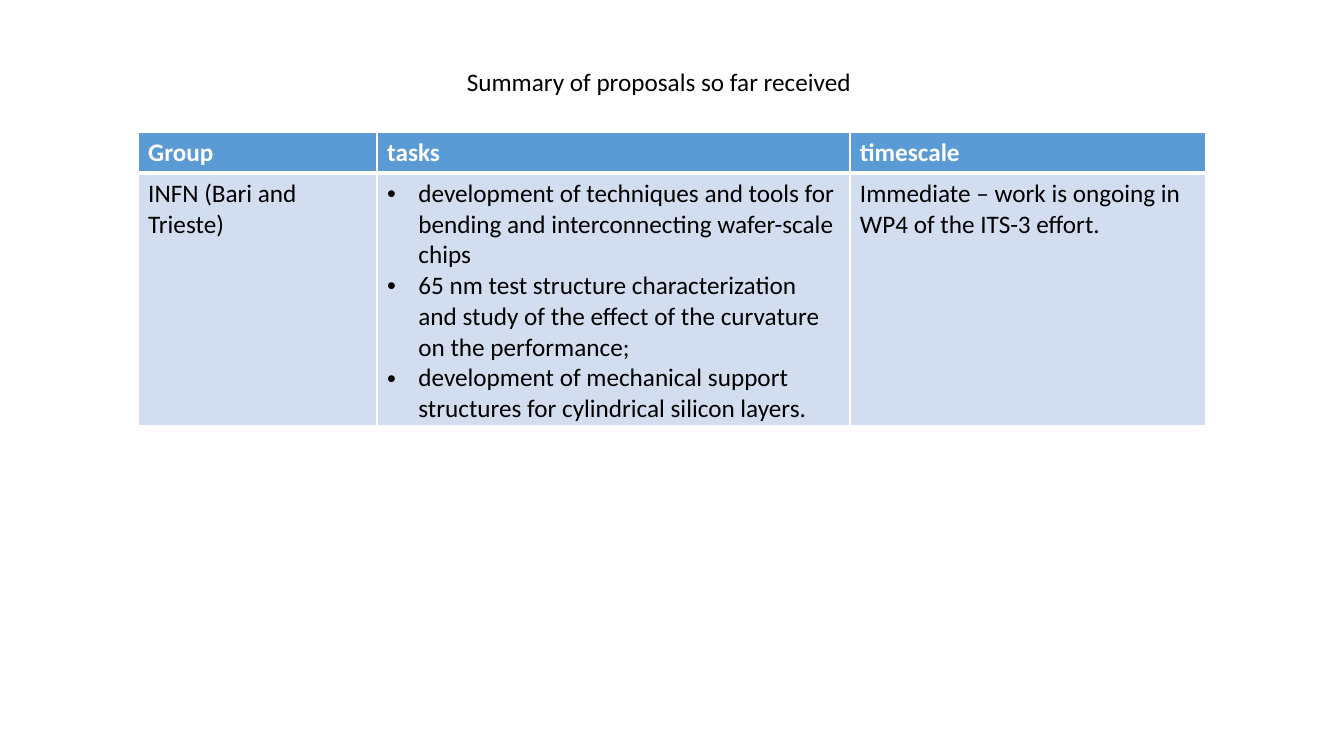
from dataclasses import dataclass

from lxml import etree
from pptx import Presentation
from pptx.dml.color import RGBColor
from pptx.enum.text import MSO_ANCHOR, MSO_AUTO_SIZE, PP_ALIGN
from pptx.oxml.ns import qn
from pptx.util import Inches, Pt

TOP = MSO_ANCHOR.TOP
LEFT = PP_ALIGN.LEFT
FIT_SHAPE = MSO_AUTO_SIZE.SHAPE_TO_FIT_TEXT

BLACK = RGBColor(0x00, 0x00, 0x00)
WHITE = RGBColor(0xFF, 0xFF, 0xFF)
HEADER_BLUE = RGBColor(0x5B, 0x9B, 0xD5)
BODY_BLUE = RGBColor(0xD2, 0xDE, 0xEF)

FONT = "Calibri"
FONT_SIZE = Pt(18)
BULLET_INDENT = Inches(0.31)
TITLE_ONLY_LAYOUT = 5


@dataclass(frozen=True)
class Column:
    heading: str
    width: float
    entries: tuple[str, ...]
    bulleted: bool = False


COLUMNS = (
    Column("Group", 2.37, ("INFN (Bari and Trieste)",)),
    Column("tasks", 4.69, (
        "development of techniques and tools for bending and interconnecting wafer-scale chips",
        "65 nm test structure characterization and study of the effect of the curvature "
        "on the performance;",
        "development of mechanical support structures for cylindrical silicon layers.",
    ), bulleted=True),
    Column("timescale", 3.53, ("Immediate – work is ongoing in WP4 of the ITS-3 effort.",)),
)
ROW_HEIGHTS = (0.41, 2.5)


def format_text(paragraph, color: RGBColor, bold: bool = False) -> None:
    for run in paragraph.runs:
        run.font.name = FONT
        run.font.size = FONT_SIZE
        run.font.bold = bold
        run.font.color.rgb = color


def add_bullet(paragraph) -> None:
    properties = paragraph._p.get_or_add_pPr()
    properties.set("marL", str(BULLET_INDENT))
    properties.set("indent", str(-BULLET_INDENT))
    etree.SubElement(properties, qn("a:buFont"), typeface="Arial")
    etree.SubElement(properties, qn("a:buChar"), char="•")


def set_borders(cell, top: float, bottom: float) -> None:
    """Draw white borders, with the top and bottom widths in points."""
    properties = cell._tc.get_or_add_tcPr()
    widths = {"a:lnL": 1, "a:lnR": 1, "a:lnT": top, "a:lnB": bottom}
    for position, (side, width) in enumerate(widths.items()):
        line = etree.Element(qn(side), w=str(Pt(width)))
        fill = etree.SubElement(line, qn("a:solidFill"))
        etree.SubElement(fill, qn("a:srgbClr"), val=str(WHITE))
        properties.insert(position, line)


def fill_cell(cell, entries: tuple[str, ...], is_header: bool, bulleted: bool) -> None:
    cell.fill.solid()
    cell.fill.fore_color.rgb = HEADER_BLUE if is_header else BODY_BLUE
    set_borders(cell, top=1 if is_header else 3, bottom=3 if is_header else 1)
    cell.text_frame.text = "\n".join(entries)
    for paragraph in cell.text_frame.paragraphs:
        if bulleted:
            add_bullet(paragraph)
        format_text(paragraph, WHITE if is_header else BLACK, bold=is_header)


def add_summary_title(slide) -> None:
    title = slide.shapes.title
    title.left, title.top = Inches(4.53), Inches(0.61)
    title.width, title.height = Inches(4.05), Inches(0.4)
    frame = title.text_frame
    frame.text = "Summary of proposals so far received"
    frame.word_wrap = False
    frame.auto_size = FIT_SHAPE
    frame.vertical_anchor = TOP
    frame.paragraphs[0].alignment = LEFT
    format_text(frame.paragraphs[0], BLACK)


def add_proposals_table(slide) -> None:
    total_width = sum(column.width for column in COLUMNS)
    proposals = slide.shapes.add_table(
        len(ROW_HEIGHTS), len(COLUMNS), Inches(1.37), Inches(1.31),
        Inches(total_width), Inches(sum(ROW_HEIGHTS))).table
    for row, height in zip(proposals.rows, ROW_HEIGHTS):
        row.height = Inches(height)
    for index, column in enumerate(COLUMNS):
        proposals.columns[index].width = Inches(column.width)
        fill_cell(proposals.cell(0, index), (column.heading,), True, False)
        fill_cell(proposals.cell(1, index), column.entries, False, column.bulleted)


def main() -> None:
    presentation = Presentation()
    presentation.slide_width = Inches(13.33)
    presentation.slide_height = Inches(7.5)
    slide = presentation.slides.add_slide(presentation.slide_layouts[TITLE_ONLY_LAYOUT])
    add_summary_title(slide)
    add_proposals_table(slide)
    presentation.save("out.pptx")


if __name__ == "__main__":
    main()
